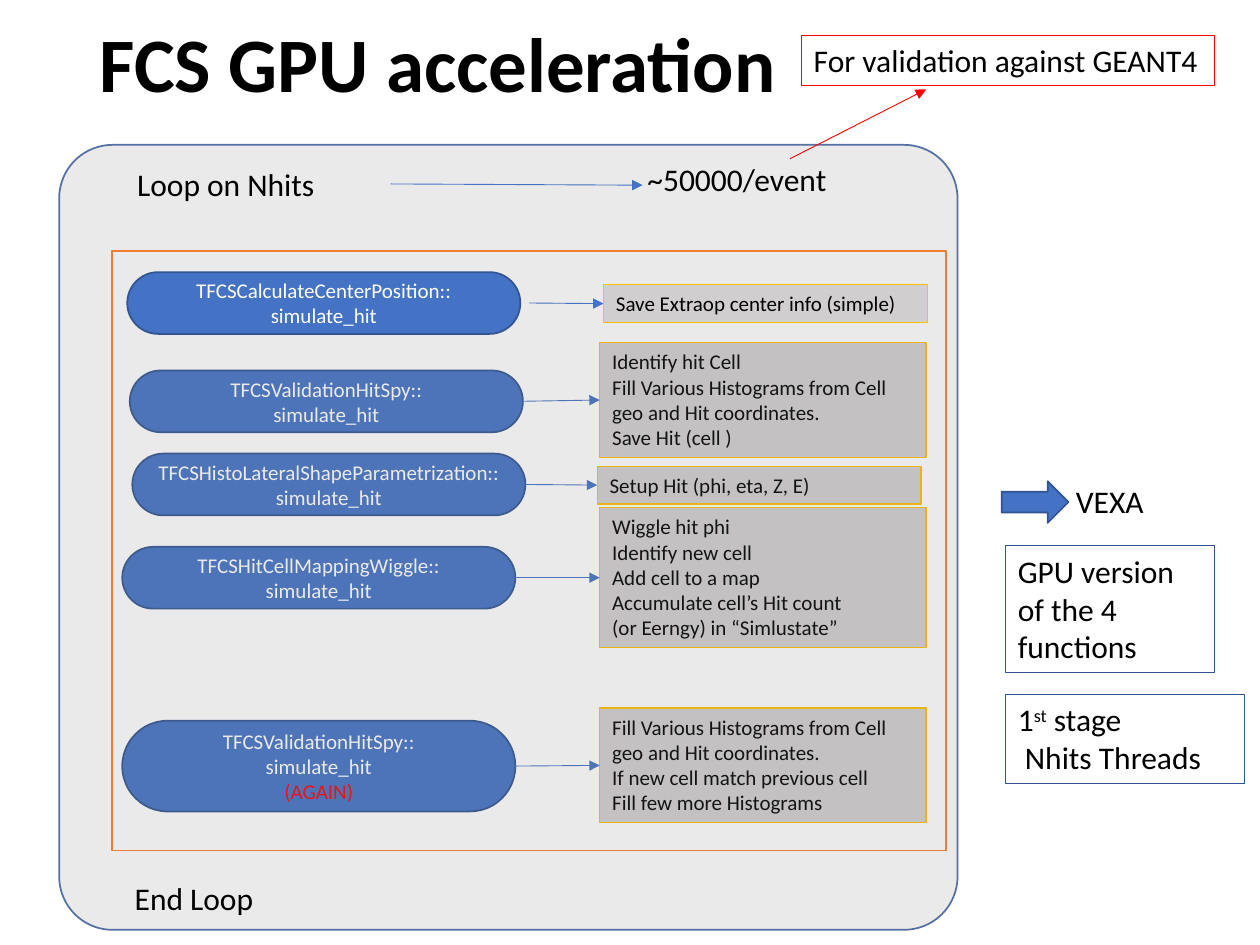
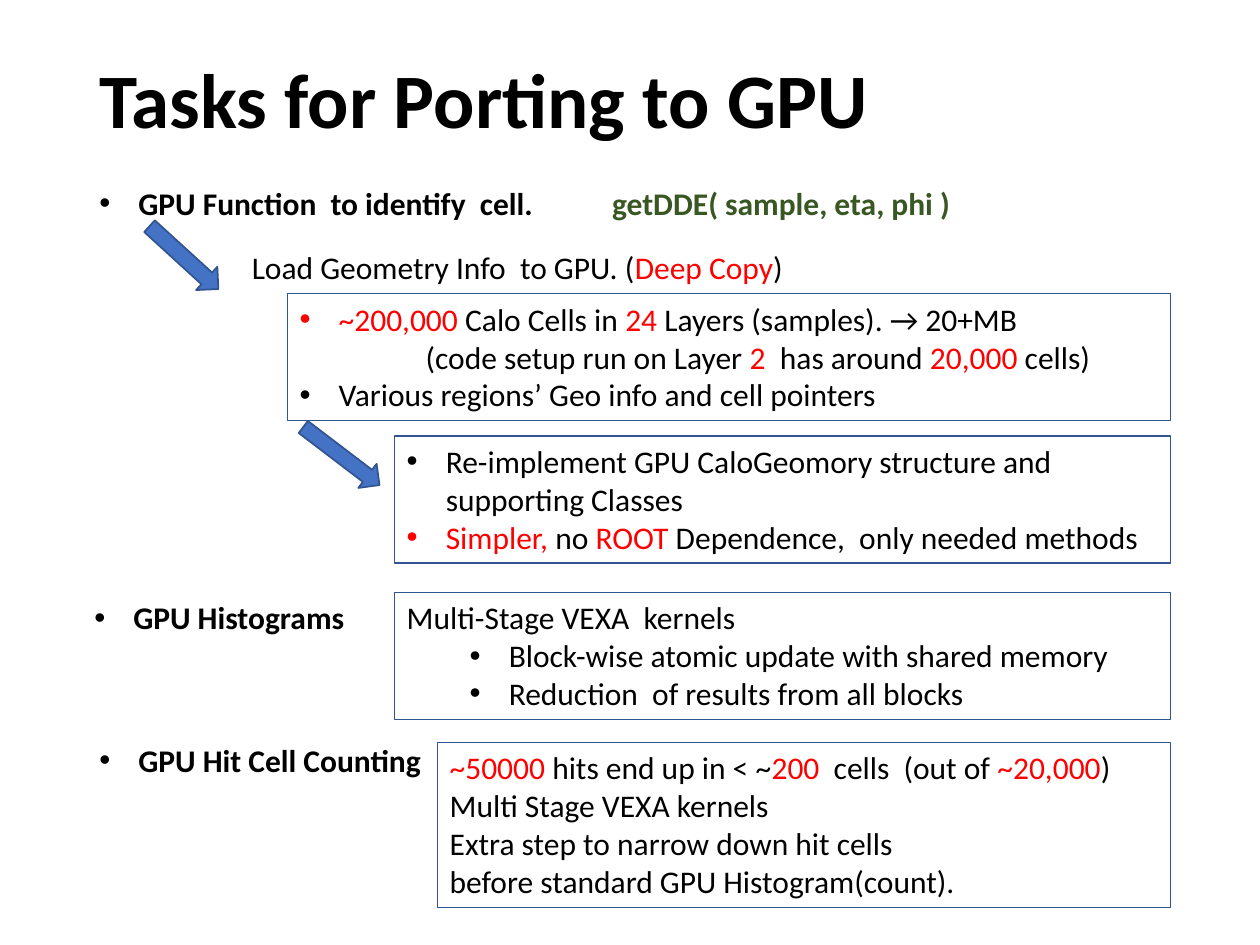
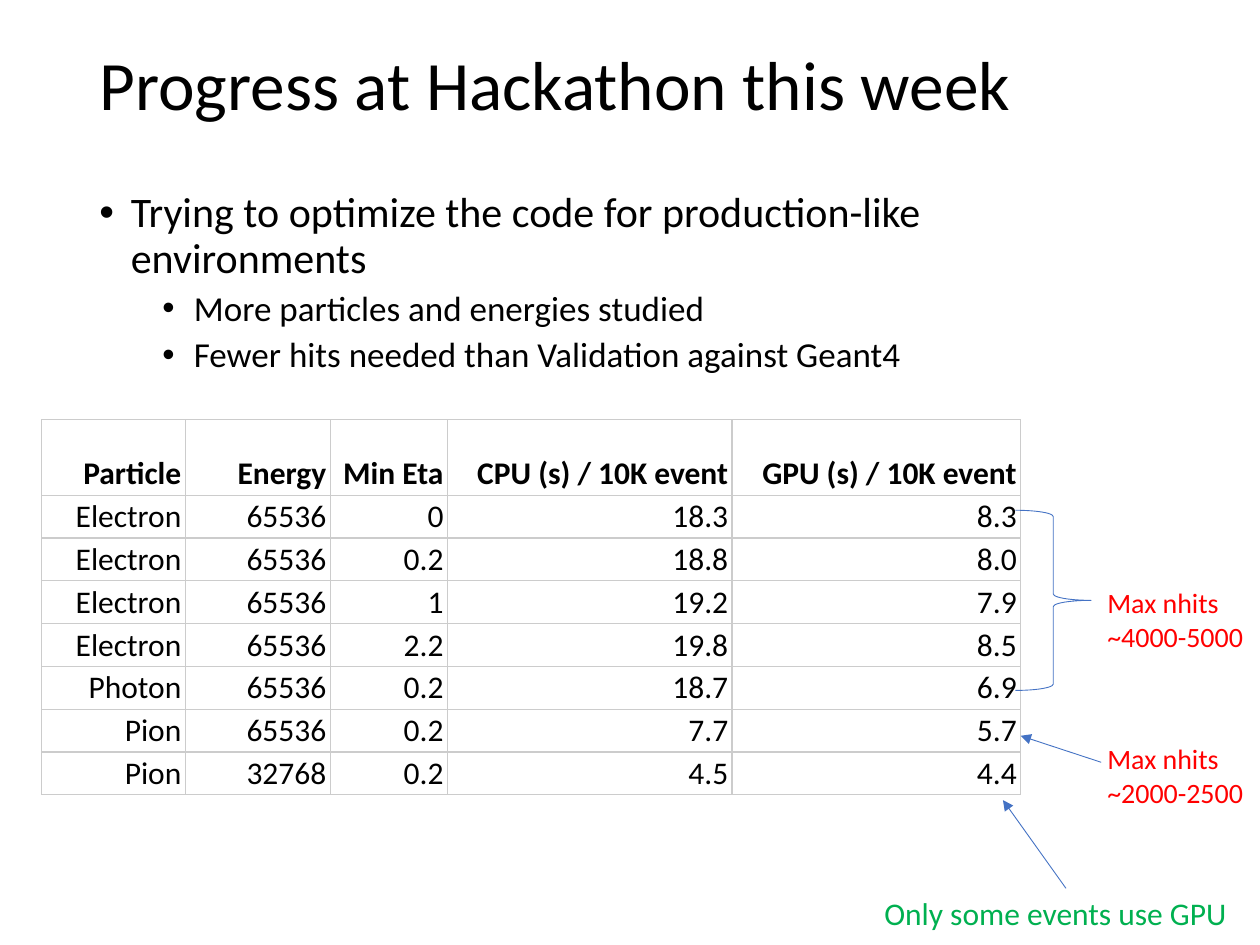
"""Build three slides on porting a fast calorimeter simulation to GPU."""
from typing import NamedTuple

from lxml.etree import SubElement
from pptx import Presentation
from pptx.dml.color import RGBColor
from pptx.enum.shapes import MSO_CONNECTOR, MSO_SHAPE
from pptx.enum.text import MSO_ANCHOR, PP_ALIGN
from pptx.oxml.ns import qn
from pptx.util import Inches, Pt

FONT = "Calibri"
COLORS = {
    "black": "000000", "white": "FFFFFF", "red": "FF0000", "blue": "4472C4",
    "navy": "325491", "gray": "D0CECE", "gold": "FFC000", "orange": "ED7D31",
    "panel": "808080", "dark green": "385723", "green": "00B050", "grid": "CCCCCC",
}


class Line(NamedTuple):
    runs: list
    margin: float = 0
    hanging: float = 0
    before: float = 0
    size: float = 0
    tab: float = 0


def bullet(*runs, margin=0.31, tab=0):
    return Line(list(runs), margin, 0.31, tab=tab)


HISTOGRAM_LINE = "Fill Various Histograms from Cell geo and Hit coordinates."
FIRST_STEP = ("TFCSCalculateCenterPosition::", (1.01, 2.16, 3.12, 0.49), (4.79, 2.26, 2.57, 0.3),
              ["Save Extraop center info (simple)"])
COVERED_STEPS = [
    ("TFCSHistoLateralShapeParametrization::", (1.05, 3.6, 3.12, 0.49), (4.74, 3.7, 2.57, 0.3),
     ["Setup Hit (phi, eta, Z, E)"]),
    ("TFCSValidationHitSpy::", (1.03, 2.94, 3.12, 0.49), (4.76, 2.72, 2.59, 0.91),
     ["Identify hit Cell", HISTOGRAM_LINE, "Save Hit (cell )"]),
    ("TFCSValidationHitSpy::", (0.97, 5.72, 3.12, 0.72), (4.76, 5.62, 2.59, 0.91),
     [HISTOGRAM_LINE, "If new cell match previous cell", "Fill few more Histograms"]),
    ("TFCSHitCellMappingWiggle::", (0.97, 4.34, 3.12, 0.49), (4.76, 4.03, 2.59, 1.11),
     ["Wiggle hit phi", "Identify new cell", "Add cell to a map",
      "Accumulate cell’s Hit count", "(or Eerngy) in “Simlustate”"]),
]
AGAIN_TOP = 5.72
LOOP_LABELS = [
    ("Loop on Nhits", (0.99, 1.26, 2.1, 0.4)),
    ("~50000/event", (5.04, 1.22, 1.73, 0.4)),
    ("VEXA", (8.44, 3.78, 1.1, 0.4)),
    ("End Loop", (0.97, 6.93, 1.29, 0.4)),
]
LOOP_NOTES = [
    ((7.98, 5.51, 1.9, 0.71), "navy",
     [["1", ("st", "black", 30000), " stage"], " Nhits Threads"]),
    ((7.98, 4.33, 1.66, 1.01), "navy", ["GPU version of the 4 functions"]),
    ((6.36, 0.28, 3.28, 0.4), "red", ["For validation against GEANT4"]),
]

TASK_HEADINGS = [
    ((0.69, 1.41, 7.54, 0.4),
     bullet("GPU Function  to identify  cell.\t", ("getDDE( sample, eta, phi )", "dark green"),
            tab=4.07)),
    ((0.65, 4.7, 2.33, 0.4), bullet("GPU Histograms")),
    ((0.69, 5.83, 2.78, 0.4), bullet("GPU Hit Cell Counting")),
]
TASK_ARROWS = [((1.09, 1.92, 0.74, 0.25), 42.4), ((2.33, 3.5, 0.76, 0.24), 37.3)]
TASK_RIGHT = 9.29
TASK_BOXES = [
    (2.28, 2.33, 1.01, [
        bullet(("~200,000 ", "red"), "Calo Cells in ", ("24", "red"),
               " Layers (samples). → 20+MB"),
        Line(["(code setup run on Layer ", ("2  ", "red"), "has around ",
              ("20,000", "red"), " cells)"], margin=1),
        bullet("Various regions’ Geo info and cell pointers")]),
    (3.13, 3.46, 1.01, [
        bullet("Re-implement GPU CaloGeomory structure and supporting Classes"),
        bullet(("Simpler,", "red"), " no ", ("ROOT", "red"),
               " Dependence,  only needed methods")]),
    (3.13, 4.7, 1.01, [
        "Multi-Stage VEXA  kernels",
        bullet("Block-wise atomic update with shared memory", margin=0.81),
        bullet("Reduction  of results from all blocks", margin=0.81)]),
    (3.47, 5.89, 1.31, [
        [("~50000 ", "red"), "hits end up in < ~", ("200 ", "red"), " cells  (out of ",
         ("~20,000", "red"), ")"],
        "Multi Stage VEXA kernels",
        "Extra step to narrow down hit cells",
        "before standard GPU Histogram(count)."]),
]

PROGRESS = [
    Line(["Trying to optimize the code for production-like environments"], 0.25, 0.25, 10, 24),
    Line(["More particles and energies studied"], 0.75, 0.25, 5, 20),
    Line(["Fewer hits needed than Validation against Geant4"], 0.75, 0.25, 5, 20),
]
TIMING_WIDTHS = [1.14, 1.15, 0.93, 2.26, 2.29]
TIMINGS = [
    ("Particle", "Energy", "Min Eta", "CPU (s) / 10K event", "GPU (s) / 10K event"),
    ("Electron", "65536", "0", "18.3", "8.3"),
    ("Electron", "65536", "0.2", "18.8", "8.0"),
    ("Electron", "65536", "1", "19.2", "7.9"),
    ("Electron", "65536", "2.2", "19.8", "8.5"),
    ("Photon", "65536", "0.2", "18.7", "6.9"),
    ("Pion", "65536", "0.2", "7.7", "5.7"),
    ("Pion", "32768", "0.2", "4.5", "4.4"),
]
TIMING_NOTES = [
    ("Only some events use GPU", (6.92, 7.05, 3.08, 0.4), 18, "green"),
    ("Max nhits ~2000-2500", (8.69, 5.84, 1.31, 0.94), 16, "red"),
    ("Max nhits ~4000-5000", (8.69, 4.6, 1.31, 0.94), 16, "red"),
]
TIMING_ARROWS = [((8.46, 7.05), (7.96, 6.35)), ((8.74, 6.05), (8.1, 5.84))]


def rgb(name):
    return RGBColor.from_string(COLORS[name])


def write(frame, lines, size=18, color="black", bold=False, align=PP_ALIGN.LEFT,
          anchor=MSO_ANCHOR.TOP, spacing=None):
    frame.word_wrap = True
    frame.vertical_anchor = anchor
    for index, line in enumerate(lines):
        if not isinstance(line, Line):
            line = Line([line] if isinstance(line, (str, tuple)) else line)
        paragraph = frame.paragraphs[0] if index == 0 else frame.add_paragraph()
        paragraph.alignment = align
        if spacing:
            paragraph.line_spacing = spacing
        if line.before:
            paragraph.space_before = Pt(line.before)
        properties = paragraph._p.get_or_add_pPr()
        if line.margin:
            properties.set("marL", str(Inches(line.margin)))
            properties.set("indent", str(-Inches(line.hanging)))
        if line.hanging:
            SubElement(properties, qn("a:buFont"), typeface="Arial")
            SubElement(properties, qn("a:buChar"), char="•")
        if line.tab:
            stops = SubElement(properties, qn("a:tabLst"))
            SubElement(stops, qn("a:tab"), pos=str(Inches(line.tab)), algn="l")
        for item in line.runs:
            text, tint, *baseline = (item, color) if isinstance(item, str) else item
            run = paragraph.add_run()
            run.text = text
            run.font.name = FONT
            run.font.size = Pt(line.size or size)
            run.font.bold = bold
            run.font.color.rgb = rgb(tint)
            if baseline:
                run._r.get_or_add_rPr().set("baseline", str(baseline[0]))


def add_text(slide, at, lines, **style):
    box = slide.shapes.add_textbox(*map(Inches, at))
    write(box.text_frame, lines, **style)


def add_title(slide, text, top, height, size=44, bold=True):
    add_text(slide, (0.69, top, 8.62, height), [text], size=size, bold=bold,
             anchor=MSO_ANCHOR.MIDDLE, spacing=0.9)


def add_block(slide, kind, at, fill=None, line="navy", width=1, lines=(), **style):
    shape = slide.shapes.add_shape(kind, *map(Inches, at))
    shape.shadow.inherit = False
    if fill:
        shape.fill.solid()
        shape.fill.fore_color.rgb = rgb(fill)
    else:
        shape.fill.background()
    shape.line.color.rgb = rgb(line)
    shape.line.width = Pt(width)
    if lines:
        write(shape.text_frame, lines, **style)
    return shape


def add_arrow(slide, start, end, color="blue"):
    arrow = slide.shapes.add_connector(MSO_CONNECTOR.STRAIGHT, *map(Inches, start + end))
    arrow.line.color.rgb = rgb(color)
    arrow.line.width = Pt(0.5)
    SubElement(arrow.line._get_or_add_ln(), qn("a:tailEnd"), type="triangle")
    SubElement(arrow._element.spPr, qn("a:effectLst"))
    return arrow


def add_step(slide, name, pill_at, box_at, actions, joined=True):
    label = [name, "simulate_hit"]
    if pill_at[1] == AGAIN_TOP:
        label.append(("(AGAIN)", "red"))
    pill = add_block(slide, MSO_SHAPE.ROUNDED_RECTANGLE, pill_at, "blue", lines=label, size=12,
                     color="white", align=PP_ALIGN.CENTER, anchor=MSO_ANCHOR.MIDDLE)
    pill.adjustments[0] = 0.5
    box = add_block(slide, MSO_SHAPE.RECTANGLE, box_at, "gray", "gold", 0.75, actions, size=12)
    middle = pill_at[1] + pill_at[3] / 2
    arrow = add_arrow(slide, (4.2, middle), (box_at[0], middle))
    if joined:
        arrow.begin_connect(pill, 3)
    arrow.end_connect(box, 1)


def build_loop_slide(slide):
    add_title(slide, "FCS GPU acceleration", 0.09, 0.9)
    for step in COVERED_STEPS:
        add_step(slide, *step)
    panel = add_block(slide, MSO_SHAPE.ROUNDED_RECTANGLE, (0.47, 1.15, 7.13, 6.23), "panel")
    panel.adjustments[0] = 0.068
    for color, alpha in zip(panel._element.spPr.iter(qn("a:srgbClr")), (16000, 82000)):
        SubElement(color, qn("a:alpha"), val=str(alpha))
    add_block(slide, MSO_SHAPE.RECTANGLE, (0.89, 1.99, 6.62, 4.76), line="orange")
    add_block(slide, MSO_SHAPE.RIGHT_ARROW, (7.95, 3.82, 0.53, 0.33), "blue")
    for text, at in LOOP_LABELS:
        add_text(slide, at, [text])
    add_arrow(slide, (3.1, 1.46), (5.1, 1.47))
    add_step(slide, *FIRST_STEP, joined=False)
    add_arrow(slide, (6.27, 1.26), (7.35, 0.71), "red")
    for at, color, lines in LOOP_NOTES:
        add_block(slide, MSO_SHAPE.RECTANGLE, at, None, color, 0.75, lines)


def build_tasks_slide(slide):
    add_title(slide, "Tasks for Porting to GPU", 0.4, 0.85)
    for at, heading in TASK_HEADINGS:
        add_text(slide, at, [heading], bold=True)
    add_text(slide, (1.9, 1.92, 7.94, 0.4),
             [["Load Geometry Info  to GPU. (", ("Deep Copy", "red"), ")"]])
    for at, angle in TASK_ARROWS:
        add_block(slide, MSO_SHAPE.RIGHT_ARROW, at, "blue").rotation = angle
    for left, top, height, lines in TASK_BOXES:
        add_block(slide, MSO_SHAPE.RECTANGLE, (left, top, TASK_RIGHT - left, height),
                  width=0.75, lines=lines)


def add_timing_table(slide):
    heights = [0.6] + [0.34] * (len(TIMINGS) - 1)
    frame = slide.shapes.add_table(
        len(TIMINGS), len(TIMING_WIDTHS),
        *map(Inches, (0.33, 3.33, sum(TIMING_WIDTHS), sum(heights))))
    table = frame.table
    table.first_row = table.horz_banding = False
    for column, width in zip(table.columns, TIMING_WIDTHS):
        column.width = Inches(width)
    for row, height, values in zip(table.rows, heights, TIMINGS):
        row.height = Inches(height)
        for cell, value in zip(row.cells, values):
            cell.margin_left = cell.margin_right = Inches(0.03)
            cell.margin_top = cell.margin_bottom = Inches(0.02)
            write(cell.text_frame, [value], bold=values is TIMINGS[0], align=PP_ALIGN.RIGHT)
            cell.vertical_anchor = MSO_ANCHOR.BOTTOM
            properties = cell._tc.get_or_add_tcPr()
            for side in ("lnL", "lnR", "lnT", "lnB"):
                border = SubElement(properties, qn(f"a:{side}"), w=str(Pt(0.75)))
                fill = SubElement(border, qn("a:solidFill"))
                SubElement(fill, qn("a:srgbClr"), val=COLORS["grid"])
            cell.fill.background()


def build_progress_slide(slide):
    add_title(slide, "Progress at Hackathon this week", 0.4, 0.59, 39.6, False)
    add_text(slide, (0.69, 1.47, 8.62, 1.7), PROGRESS, spacing=0.9)
    add_timing_table(slide)
    for text, at, size, color in TIMING_NOTES:
        add_text(slide, at, [text], size=size, color=color)
    for start, end in TIMING_ARROWS:
        add_arrow(slide, start, end)
    add_block(slide, MSO_SHAPE.RIGHT_BRACE, (8.06, 4.05, 0.6, 1.43), line="blue", width=0.5)


def main():
    presentation = Presentation()
    presentation.slide_width = Inches(10)
    presentation.slide_height = Inches(7.5)
    for build in (build_loop_slide, build_tasks_slide, build_progress_slide):
        build(presentation.slides.add_slide(presentation.slide_layouts[6]))
    presentation.save("out.pptx")


if __name__ == "__main__":
    main()
